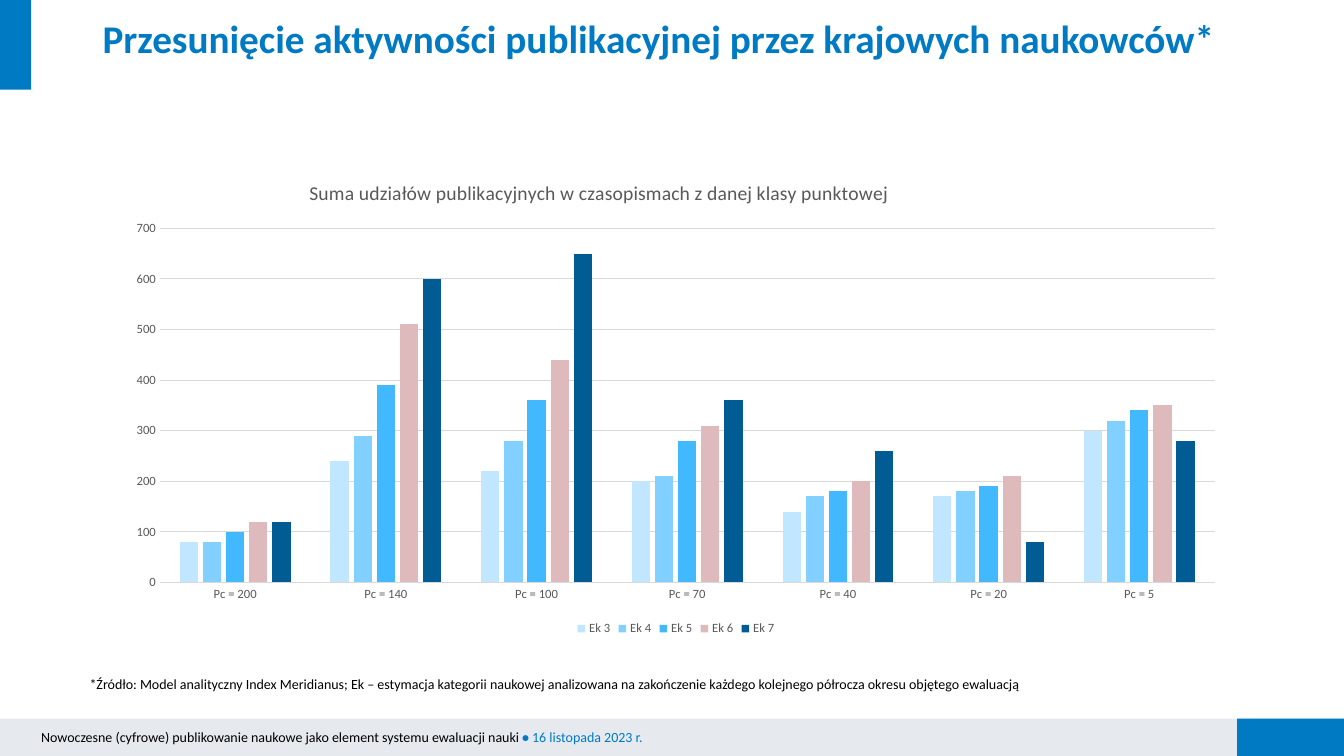
"""Build a slide charting publication shares by journal point class."""
import pptx
import pptx.chart.data
import pptx.dml.color
import pptx.enum.chart
import pptx.enum.shapes
import pptx.enum.text
import pptx.oxml
import pptx.oxml.ns
import pptx.util
from dataclasses import dataclass

Inches = pptx.util.Inches
Pt = pptx.util.Pt


@dataclass(frozen=True)
class Theme:
    font: str = "Calibri"
    blue: str = "007AC3"
    band: str = "E6EAEF"
    black: str = "000000"
    white: str = "FFFFFF"
    grey: str = "595959"
    grid: str = "D9D9D9"
    title: int = 28
    chart_title: int = 14
    note: int = 10
    axis: int = 9
    hairline: float = 0.75


T = Theme()
SLIDE = (13.33, 7.5)
BARS = [
    ((0, 7.13, 13.33, 0.37), T.band),
    ((0, 0, 0.31, 0.89), T.blue),
    ((12.27, 7.13, 1.06, 0.37), T.blue),
]
TEXTS = [
    ((0.31, 7.18, 9.33, 0.27), 1, 0, T.note, [
        ("Nowoczesne (cyfrowe) publikowanie naukowe jako element systemu ewaluacji nauki ", T.black, False),
        ("• ", T.blue, True),
        ("16 listopada 2023 r.", T.blue, False),
    ]),
    ((0.79, 6.57, 11.36, 0.33), 1.5, 12, T.note, [
        ("*Źródło: Model analityczny Index Meridianus; Ek – estymacja kategorii naukowej analizowana "
         "na zakończenie każdego kolejnego półrocza okresu objętego ewaluacją", T.black, False),
    ]),
    ((0.92, 0.15, 12.41, 0.95), 0.9, 0, T.title, [
        ("Przesunięcie aktywności publikacyjnej przez krajowych naukowców*", T.blue, True),
    ]),
]
CHART_BOX = (1.14, 1.6, 11.13, 4.75)
CHART_TITLE = "Suma udziałów publikacyjnych w czasopismach z danej klasy punktowej"
TITLE_LAYOUT = {"xMode": "edge", "yMode": "edge", "x": 0.17, "y": 0.03}
PLOT_LAYOUT = {"layoutTarget": "inner", "xMode": "edge", "yMode": "edge",
               "x": 0.04, "y": 0.14, "w": 0.94, "h": 0.74}
CLASSES = [f"Pc = {points}" for points in (200, 140, 100, 70, 40, 20, 5)]
SERIES = [
    ("Ek 3", "C0E7FF", (80, 240, 220, 200, 140, 170, 300)),
    ("Ek 4", "81D0FF", (80, 290, 280, 210, 170, 180, 320)),
    ("Ek 5", "42B8FF", (100, 390, 360, 280, 180, 190, 340)),
    ("Ek 6", "DEBABD", (120, 510, 440, 310, 200, 210, 350)),
    ("Ek 7", "005C92", (120, 600, 650, 360, 260, 80, 280)),
]


def rgb(color):
    return pptx.dml.color.RGBColor.from_string(color)


def paint(fill, color):
    fill.solid()
    fill.fore_color.rgb = rgb(color)


def style_font(font, size, color, bold=False):
    font.name = T.font
    font.size = Pt(size)
    font.bold = bold
    font.color.rgb = rgb(color)


def style_line(line):
    line.color.rgb = rgb(T.grid)
    line.width = Pt(T.hairline)


def add_bar(slide, box, color):
    sp = slide.shapes.add_shape(pptx.enum.shapes.MSO_SHAPE.RECTANGLE, *map(Inches, box))
    sp.shadow.inherit = False
    paint(sp.fill, color)
    sp.line.fill.background()


def add_text(slide, box, spacing, after, size, runs):
    tf = slide.shapes.add_textbox(*map(Inches, box)).text_frame
    tf.word_wrap = True
    tf.vertical_anchor = pptx.enum.text.MSO_ANCHOR.TOP
    p = tf.paragraphs[0]
    p.line_spacing = spacing
    p.space_after = Pt(after)
    for text, color, bold in runs:
        r = p.add_run()
        r.text = text
        style_font(r.font, size, color, bold)


def set_layout(parent, before, settings):
    """Place a chart part by fractions of the chart area."""
    qn = pptx.oxml.ns.qn
    for old in parent.findall(qn("c:layout")):
        parent.remove(old)
    items = "".join(f'<c:{key} val="{value}"/>' for key, value in settings.items())
    layout = pptx.oxml.parse_xml(
        f'<c:layout {pptx.oxml.ns.nsdecls("c")}><c:manualLayout>{items}</c:manualLayout></c:layout>')
    parent.insert([child.tag for child in parent].index(qn(before)), layout)


def add_publication_chart(slide):
    kinds = pptx.enum.chart
    data = pptx.chart.data.CategoryChartData()
    data.categories = CLASSES
    for name, _, values in SERIES:
        data.add_series(name, values)
    chart = slide.shapes.add_chart(
        kinds.XL_CHART_TYPE.COLUMN_CLUSTERED, *map(Inches, CHART_BOX), data).chart
    style_font(chart.font, T.note, T.black)

    p = chart.chart_title.text_frame.paragraphs[0]
    r = p.add_run()
    r.text = CHART_TITLE
    style_font(r.font, T.chart_title, T.grey)
    chart.chart_title.include_in_layout = False
    title = chart.chart_title.format and chart.element.find(".//" + pptx.oxml.ns.qn("c:title"))
    set_layout(title, "c:overlay", TITLE_LAYOUT)
    set_layout(chart.element.find(".//" + pptx.oxml.ns.qn("c:plotArea")), "c:barChart", PLOT_LAYOUT)

    plot = chart.plots[0]
    plot.gap_width = 219
    plot.overlap = -27
    plot.vary_by_categories = False
    for series, (_, color, _) in zip(plot.series, SERIES):
        paint(series.format.fill, color)
        series.invert_if_negative = False

    for axis in (chart.category_axis, chart.value_axis):
        axis.major_tick_mark = axis.minor_tick_mark = kinds.XL_TICK_MARK.NONE
        style_font(axis.tick_labels.font, T.axis, T.grey)
    style_line(chart.category_axis.format.line)
    values = chart.value_axis
    values.minimum_scale, values.maximum_scale, values.major_unit = 0, 700, 100
    values.format.line.fill.background()
    style_line(values.major_gridlines.format.line)

    chart.has_legend = True
    chart.legend.position = kinds.XL_LEGEND_POSITION.BOTTOM
    chart.legend.include_in_layout = False
    style_font(chart.legend.font, T.axis, T.grey)


def main():
    prs = pptx.Presentation()
    prs.slide_width, prs.slide_height = map(Inches, SLIDE)
    s = prs.slides.add_slide(prs.slide_layouts[6])
    paint(s.background.fill, T.white)
    for bar in BARS:
        add_bar(s, *bar)
    for text in TEXTS:
        add_text(s, *text)
    add_publication_chart(s)
    prs.save("out.pptx")


if __name__ == "__main__":
    main()
